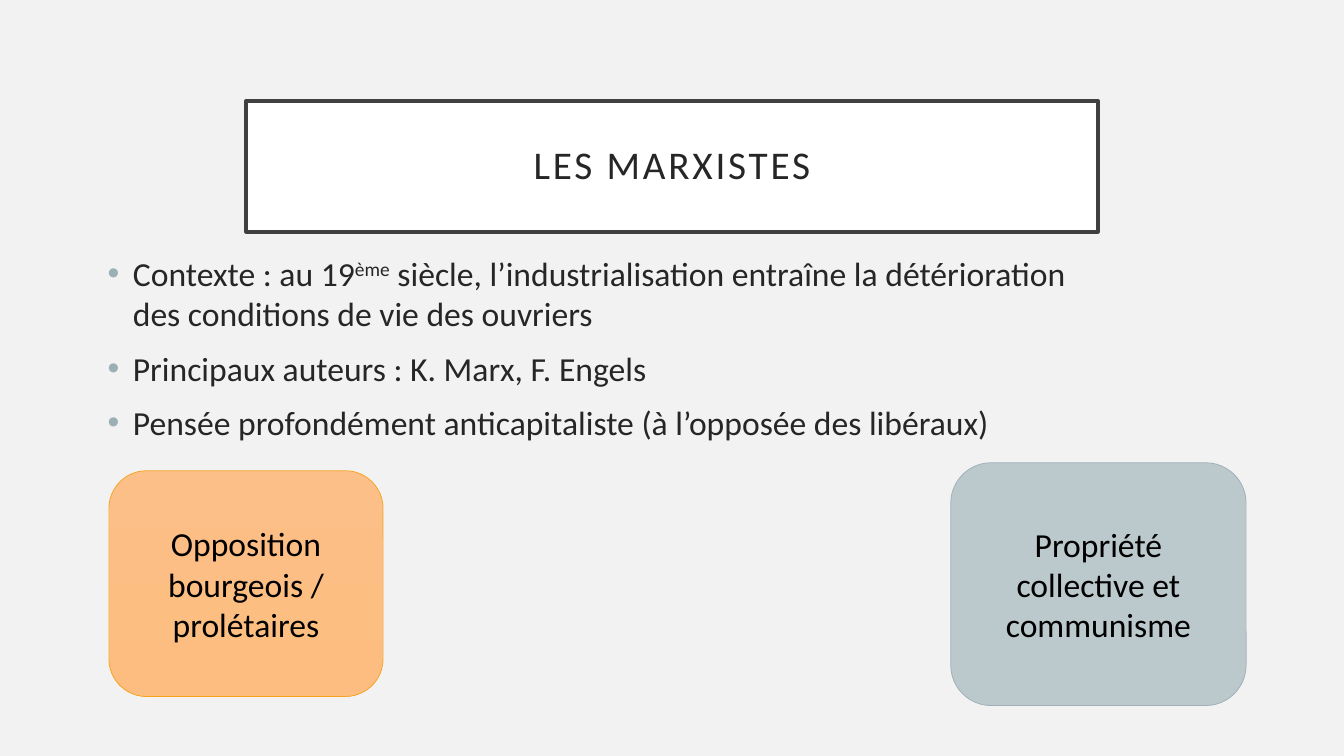
import lxml.etree
import pptx
import pptx.dml.color
import pptx.enum.shapes
import pptx.enum.text
import pptx.oxml.ns
import pptx.util

Inches = pptx.util.Inches
Pt = pptx.util.Pt
RGBColor = pptx.dml.color.RGBColor
CENTER = pptx.enum.text.PP_ALIGN.CENTER
MIDDLE = pptx.enum.text.MSO_ANCHOR.MIDDLE

BACKGROUND = RGBColor(0xF2, 0xF2, 0xF2)
WHITE = RGBColor(0xFF, 0xFF, 0xFF)
BLACK = RGBColor(0x00, 0x00, 0x00)
DARK_TEXT = RGBColor(0x26, 0x26, 0x26)
TITLE_BORDER = RGBColor(0x40, 0x40, 0x40)
ORANGE_TOP = RGBColor(0xFC, 0xBF, 0x87)
ORANGE_BOTTOM = RGBColor(0xFD, 0xBD, 0x80)
ORANGE_BORDER = RGBColor(0xF6, 0xA2, 0x1D)
GREY_TOP = RGBColor(0xBB, 0xC8, 0xCC)
GREY_BOTTOM = RGBColor(0xB8, 0xC6, 0xCB)
GREY_BORDER = RGBColor(0x9B, 0xAF, 0xB5)

# Each bullet is a list of (text, baseline shift in thousandths of a percent).
BULLETS = [
    [
        ("Contexte : au 19", None),
        ("ème", 30000),
        (" siècle, l’industrialisation entraîne la détérioration "
         "des conditions de vie des ouvriers", None),
    ],
    [("Principaux auteurs : K. Marx, F. Engels", None)],
    [("Pensée profondément anticapitaliste (à l’opposée des libéraux)", None)],
]
IDEAS = [
    ("Opposition bourgeois / prolétaires", (1.08, 4.67, 2.72, 2.24),
     (ORANGE_TOP, ORANGE_BOTTOM), ORANGE_BORDER),
    ("Propriété collective et communisme", (9.43, 4.59, 2.93, 2.41),
     (GREY_TOP, GREY_BOTTOM), GREY_BORDER),
]


def set_attributes(target, values):
    for name, value in values.items():
        setattr(target, name, value)


def add_run(paragraph, text, size, color):
    run = paragraph.add_run()
    run.text = text
    set_attributes(run.font, {"name": "Calibri", "size": Pt(size)})
    run.font.color.rgb = color
    return run


def set_border(shape, color, width):
    shape.line.color.rgb = color
    shape.line.width = Pt(width)


def place_title(slide, text, box):
    title = slide.shapes.title
    set_attributes(title, dict(zip(("left", "top", "width", "height"), map(Inches, box))))
    title.fill.solid()
    title.fill.fore_color.rgb = WHITE
    set_border(title, TITLE_BORDER, 2.5)
    margins = ("margin_left", "margin_top", "margin_right", "margin_bottom")
    set_attributes(title.text_frame, {
        **dict.fromkeys(margins, Inches(0.2)),
        "vertical_anchor": MIDDLE,
        "word_wrap": True,
        "auto_size": pptx.enum.text.MSO_AUTO_SIZE.NONE,
    })
    paragraph = title.text_frame.paragraphs[0]
    set_attributes(paragraph, {"alignment": CENTER, "line_spacing": 0.9})
    run = add_run(paragraph, text, 28, DARK_TEXT)
    run.font._element.set("spc", "200")


def add_bullet_mark(paragraph):
    """Give the paragraph a hanging indent and a coloured bullet."""
    properties = paragraph._p.get_or_add_pPr()
    indent = Inches(0.25)
    properties.set("marL", str(indent))
    properties.set("indent", str(-indent))
    qn = pptx.oxml.ns.qn
    bullet_color = lxml.etree.SubElement(properties, qn("a:buClr"))
    lxml.etree.SubElement(bullet_color, qn("a:srgbClr"), val=str(GREY_BORDER))
    lxml.etree.SubElement(properties, qn("a:buFont"), typeface="Arial")
    lxml.etree.SubElement(properties, qn("a:buChar"), char="•")


def add_bullets(slide, bullets, box):
    text_frame = slide.shapes.add_textbox(*map(Inches, box)).text_frame
    text_frame.word_wrap = True
    for index, pieces in enumerate(bullets):
        paragraph = text_frame.add_paragraph() if index else text_frame.paragraphs[0]
        paragraph.space_before = Pt(10)
        add_bullet_mark(paragraph)
        for text, baseline in pieces:
            run = add_run(paragraph, text, 24, DARK_TEXT)
            if baseline:
                run.font._element.set("baseline", str(baseline))


def add_idea(slide, text, box, gradient, border):
    shape = slide.shapes.add_shape(
        pptx.enum.shapes.MSO_SHAPE.ROUNDED_RECTANGLE, *map(Inches, box))
    shape.shadow.inherit = False
    shape.fill.gradient()
    shape.fill.gradient_angle = 270
    for stop, color, position in zip(shape.fill.gradient_stops, gradient, (0, 1)):
        stop.color.rgb = color
        stop.position = position
    set_border(shape, border, 0.5)
    set_attributes(shape.text_frame, {"word_wrap": True, "vertical_anchor": MIDDLE})
    paragraph = shape.text_frame.paragraphs[0]
    paragraph.alignment = CENTER
    add_run(paragraph, text, 24, BLACK)


def main():
    presentation = pptx.Presentation()
    set_attributes(presentation, {"slide_width": Inches(13.33), "slide_height": Inches(7.5)})
    slide = presentation.slides.add_slide(presentation.slide_layouts.get_by_name("Title Only"))
    slide.background.fill.solid()
    slide.background.fill.fore_color.rgb = BACKGROUND
    place_title(slide, "LES MARXISTES", (2.44, 1, 8.45, 1.3))
    add_bullets(slide, BULLETS, (0.97, 2.46, 10.13, 3.39))
    for idea in IDEAS:
        add_idea(slide, *idea)
    presentation.save("out.pptx")


if __name__ == "__main__":
    main()
